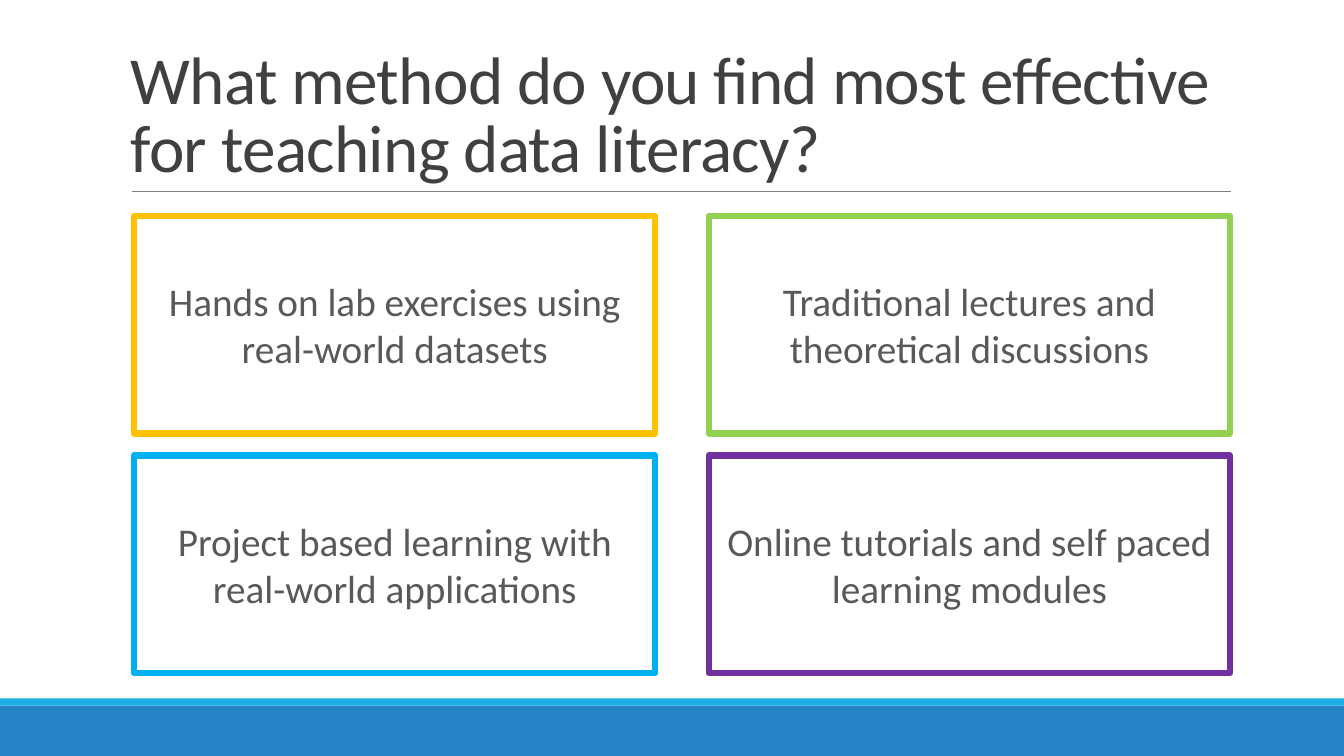
from dataclasses import dataclass

from pptx import Presentation, util as u
from pptx.dml.color import RGBColor
from pptx.enum import shapes, text
from pptx.oxml import parse_xml
from pptx.oxml.ns import nsdecls

PX = 9144  # EMU in one px, at 100 px to the inch


@dataclass(frozen=True)
class Theme:
    font: str = "Calibri"
    title_size: int = 48
    answer_size: int = 28
    title_color: str = "404040"
    answer_color: str = "595959"
    rule_color: str = "808080"
    band_color: str = "2683C6"
    stripe_color: str = "1CADE4"


@dataclass(frozen=True)
class Box:
    left: int
    top: int
    width: int
    height: int

    def emu(self) -> list[int]:
        return [px(self.left), px(self.top), px(self.width), px(self.height)]


@dataclass(frozen=True)
class Answer:
    wording: str
    color: str


THEME = Theme()
WIDTH, HEIGHT = 1333, 750
TITLE = "What method do you find most effective for teaching data literacy?"
ANSWERS = [
    Answer("Hands on lab exercises using real-world datasets", "FFC000"),
    Answer("Traditional lectures and theoretical discussions", "92D050"),
    Answer("Project based learning with real-world applications", "00B0F0"),
    Answer("Online tutorials and self paced learning modules", "7030A0"),
]
FIRST_CARD = Box(133, 214, 517, 216)
COLUMN_STEP, ROW_STEP, COLUMNS = 570, 238, 2


def px(length: int) -> u.Emu:
    return u.Emu(length * PX)


def rgb(color: str) -> RGBColor:
    return RGBColor.from_string(color)


def write(shape, wording: str, *, size: int, color: str,
          align=text.PP_ALIGN.LEFT, anchor=text.MSO_ANCHOR.MIDDLE,
          line_spacing: float = 1.0, tracking: float = 0) -> None:
    frame = shape.text_frame
    frame.word_wrap = True
    frame.vertical_anchor = anchor
    paragraph = frame.paragraphs[0]
    paragraph.alignment = align
    paragraph.line_spacing = line_spacing
    run = paragraph.add_run()
    run.text = wording
    run.font.name = THEME.font
    run.font.size = u.Pt(size)
    run.font.color.rgb = rgb(color)
    if tracking:
        run.font._element.set("spc", str(round(tracking * 100)))


def add_rectangle(slide, box: Box, *, fill: str | None = None,
                  line: str | None = None, line_width: float = 0):
    shape = slide.shapes.add_shape(shapes.MSO_SHAPE.RECTANGLE, *box.emu())
    shape.shadow.inherit = False
    if fill:
        shape.fill.solid()
        shape.fill.fore_color.rgb = rgb(fill)
    else:
        shape.fill.background()
    if line:
        shape.line.color.rgb = rgb(line)
        shape.line.width = u.Pt(line_width)
    else:
        shape.line.fill.background()
    return shape


def add_rule(slide, left: int, right: int, y: int) -> None:
    rule = slide.shapes.add_connector(
        shapes.MSO_CONNECTOR.STRAIGHT, px(left), px(y), px(right), px(y))
    rule.line.color.rgb = rgb(THEME.rule_color)
    rule.line.width = u.Pt(0.5)
    rule._element.spPr.append(parse_xml(f"<a:effectLst {nsdecls('a')}/>"))


def main() -> None:
    presentation = Presentation()
    presentation.slide_width, presentation.slide_height = px(WIDTH), px(HEIGHT)
    slide = presentation.slides.add_slide(presentation.slide_layouts[6])

    # Footer bands
    add_rectangle(slide, Box(0, 700, WIDTH, 50), fill=THEME.band_color)
    add_rectangle(slide, Box(0, 693, WIDTH, 7), fill=THEME.stripe_color)

    # Title and the rule under it
    add_rule(slide, 131, 1221, 190)
    title = slide.shapes.add_textbox(*Box(120, 31, 1100, 159).emu())
    write(title, TITLE, size=THEME.title_size, color=THEME.title_color,
          anchor=text.MSO_ANCHOR.BOTTOM, line_spacing=0.85, tracking=-0.5)

    # Answer cards, row by row
    for index, answer in enumerate(ANSWERS):
        row, column = divmod(index, COLUMNS)
        box = Box(FIRST_CARD.left + column * COLUMN_STEP,
                  FIRST_CARD.top + row * ROW_STEP,
                  FIRST_CARD.width, FIRST_CARD.height)
        card = add_rectangle(slide, box, line=answer.color, line_width=4.5)
        write(card, answer.wording, size=THEME.answer_size,
              color=THEME.answer_color, align=text.PP_ALIGN.CENTER)

    presentation.save("out.pptx")


if __name__ == "__main__":
    main()
